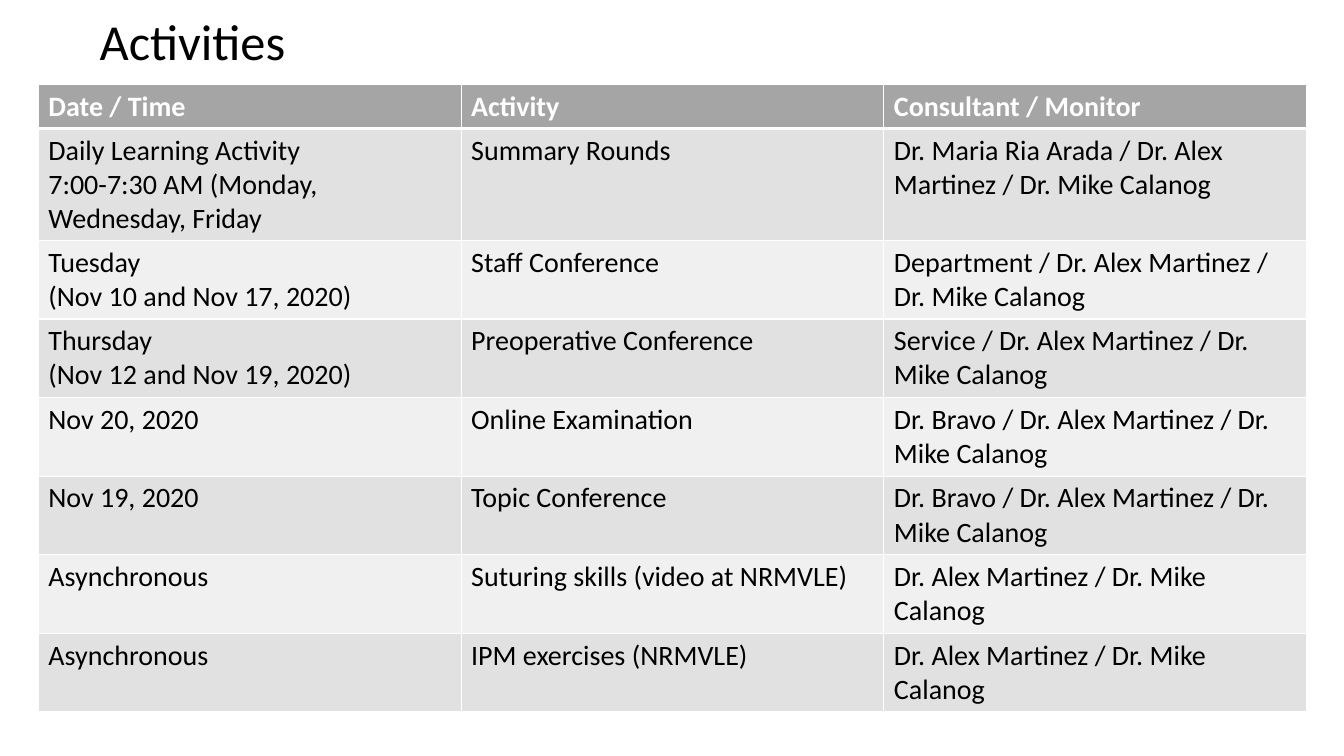
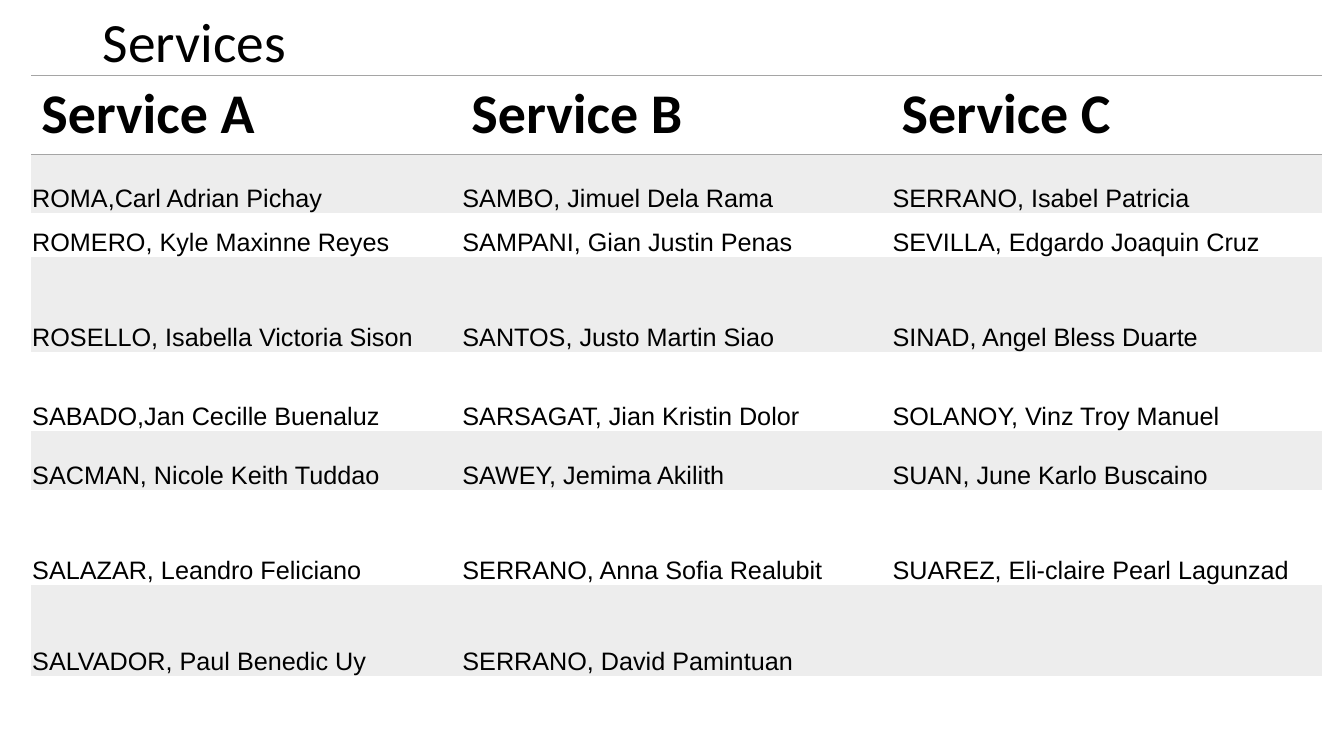
from dataclasses import dataclass, field, replace

from lxml.etree import SubElement
from pptx import Presentation
from pptx.dml.color import RGBColor
from pptx.enum.text import MSO_ANCHOR
from pptx.oxml.ns import qn
from pptx.util import Inches, Pt

# Shared look
BLACK, WHITE, GREY = "000000", "FFFFFF", "A5A5A5"
DARK_BAND, LIGHT_BAND, PALE_BAND = "E1E1E1", "F0F0F0", "EDEDED"
WHITE_GRID = {side: (WHITE, 1) for side in "LRTB"}


@dataclass
class CellStyle:
    font: str = "Calibri"
    size: float = 20
    color: str = BLACK
    bold: bool = False
    fills: tuple = (None,)  # cycled row by row
    borders: dict = field(default_factory=dict)  # side -> (colour, points)
    anchor: MSO_ANCHOR = MSO_ANCHOR.TOP
    margins: tuple = (0.1, 0.05, 0.1, 0.05)  # left, top, right, bottom


# Content
ACTIVITIES = [
    ("Date / Time", "Activity", "Consultant / Monitor"),
    ("Daily Learning Activity\n7:00-7:30 AM (Monday, Wednesday, Friday", "Summary Rounds",
     "Dr. Maria Ria Arada / Dr. Alex Martinez / Dr. Mike Calanog"),
    ("Tuesday\n(Nov 10 and Nov 17, 2020)", "Staff Conference",
     "Department / Dr. Alex Martinez / Dr. Mike Calanog"),
    ("Thursday\n(Nov 12 and Nov 19, 2020)", "Preoperative Conference",
     "Service / Dr. Alex Martinez / Dr. Mike Calanog"),
    ("Nov 20, 2020", "Online Examination",
     "Dr. Bravo / Dr. Alex Martinez / Dr. Mike Calanog"),
    ("Nov 19, 2020", "Topic Conference",
     "Dr. Bravo / Dr. Alex Martinez / Dr. Mike Calanog"),
    ("Asynchronous", "Suturing skills (video at NRMVLE)",
     "Dr. Alex Martinez / Dr. Mike Calanog"),
    ("Asynchronous", "IPM exercises (NRMVLE)",
     "Dr. Alex Martinez / Dr. Mike Calanog"),
]
SERVICES = [
    ("Service A", "Service B", "Service C"),
    ("ROMA,Carl Adrian Pichay", "SAMBO, Jimuel Dela Rama", "SERRANO, Isabel Patricia"),
    ("ROMERO, Kyle Maxinne Reyes", "SAMPANI, Gian Justin Penas",
     "SEVILLA, Edgardo Joaquin Cruz"),
    ("ROSELLO, Isabella Victoria Sison", "SANTOS, Justo Martin Siao",
     "SINAD, Angel Bless Duarte"),
    ("SABADO,Jan Cecille Buenaluz", "SARSAGAT, Jian Kristin Dolor",
     "SOLANOY, Vinz Troy Manuel"),
    ("SACMAN, Nicole Keith Tuddao", "SAWEY, Jemima Akilith", "SUAN, June Karlo Buscaino"),
    ("SALAZAR, Leandro Feliciano", "SERRANO, Anna Sofia Realubit",
     "SUAREZ, Eli-claire Pearl Lagunzad"),
    ("SALVADOR, Paul Benedic Uy", "SERRANO, David Pamintuan", ""),
    ("", "", ""),
]


def rgb(color):
    return RGBColor.from_string(color)


def format_text(tf, font, size, color, bold=False):
    for p in tf.paragraphs:
        for r in p.runs:
            r.font.name, r.font.size, r.font.bold = font, Pt(size), bold
            r.font.color.rgb = rgb(color)


def add_title(s, text, left, top, width, height, size):
    sp = s.shapes.add_textbox(Inches(left), Inches(top), Inches(width), Inches(height))
    tf = sp.text_frame
    tf.word_wrap = True
    tf.vertical_anchor = MSO_ANCHOR.MIDDLE
    tf.text = text
    tf.paragraphs[0].line_spacing = 0.9
    format_text(tf, "Calibri", size, BLACK)


def set_borders(cell, borders):
    """Draw the given sides and clear the others; lines precede the fill."""
    tcPr = cell._tc.get_or_add_tcPr()
    for i, side in enumerate("LRTB"):
        ln = SubElement(tcPr, qn(f"a:ln{side}"))
        if side in borders:
            color, points = borders[side]
            ln.set("w", str(Pt(points)))
            SubElement(SubElement(ln, qn("a:solidFill")), qn("a:srgbClr")).set("val", color)
        else:
            SubElement(ln, qn("a:noFill"))
        tcPr.insert(i, ln)


def style_cell(cell, text, style, fill):
    cell.text_frame.text = text
    format_text(cell.text_frame, style.font, style.size, style.color, style.bold)
    cell.vertical_anchor = style.anchor
    (cell.margin_left, cell.margin_top,
     cell.margin_right, cell.margin_bottom) = map(Inches, style.margins)
    if fill:
        cell.fill.solid()
        cell.fill.fore_color.rgb = rgb(fill)
    else:
        cell.fill.background()
    set_borders(cell, style.borders)


def add_grid(s, rows, left, top, width, heights, header, body):
    columns = len(rows[0])
    table = s.shapes.add_table(len(rows), columns, Inches(left), Inches(top),
                               Inches(width), Inches(sum(heights))).table
    table.first_row = table.horz_banding = False
    for column in table.columns:
        column.width = Inches(width / columns)
    # The first body row shares the rule under the header
    first = replace(body, borders={**body.borders, "T": header.borders["B"]})
    styles = [header, first] + [body] * (len(rows) - 2)
    for i, (values, height, style) in enumerate(zip(rows, heights, styles)):
        table.rows[i].height = Inches(height)
        fill = style.fills[(i - 1) % len(style.fills)]
        for j, text in enumerate(values):
            style_cell(table.cell(i, j), text, style, fill)


def add_activities(prs):
    s = prs.slides.add_slide(prs.slide_layouts[6])
    add_title(s, "Activities", 0.89, 0.11, 11.5, 0.66, 36)
    header = CellStyle(color=WHITE, bold=True, fills=(GREY,),
                       borders={**WHITE_GRID, "B": (WHITE, 3)})
    body = CellStyle(fills=(DARK_BAND, LIGHT_BAND), borders=WHITE_GRID)
    add_grid(s, ACTIVITIES, 0.38, 0.84, 12.58, [0.43, 1.11] + [0.78] * 6, header, body)


def add_services(prs):
    s = prs.slides.add_slide(prs.slide_layouts[6])
    add_title(s, "Services", 0.92, 0.12, 11.5, 0.64, 39.6)
    header = CellStyle(size=40, bold=True, borders={"T": (GREY, 1), "B": (GREY, 1)})
    body = CellStyle(font="Arial", size=18, fills=(PALE_BAND, None),
                     anchor=MSO_ANCHOR.BOTTOM, margins=(0.01, 0.01, 0.01, 0))
    heights = [0.78, 0.58, 0.44, 0.94, 0.79, 0.58, 0.94, 0.91, 0.66]
    add_grid(s, SERVICES, 0.31, 0.75, 12.8, heights, header, body)


def main():
    prs = Presentation()
    prs.slide_width, prs.slide_height = Inches(13.33), Inches(7.5)
    add_activities(prs)
    add_services(prs)
    prs.save("out.pptx")


if __name__ == "__main__":
    main()
